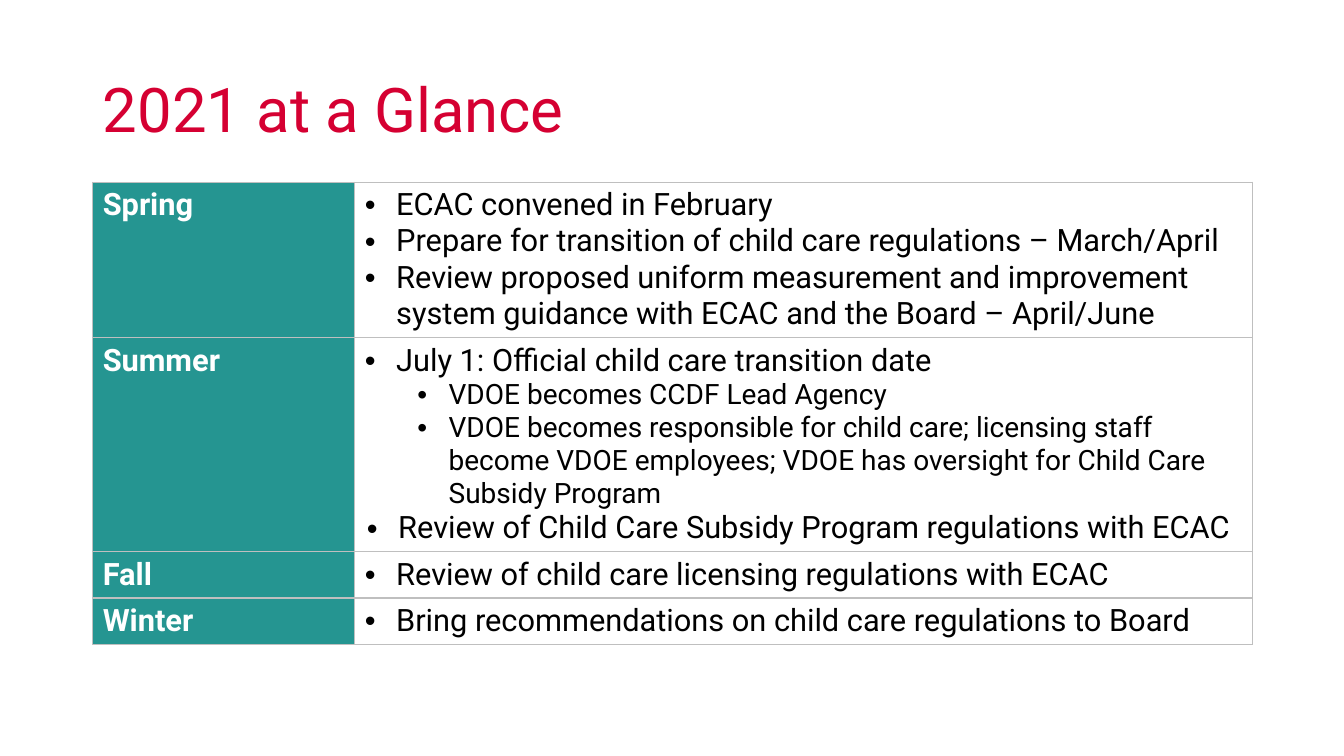
import lxml.etree
import pptx
import pptx.dml.color
import pptx.enum.text
import pptx.oxml.ns
import pptx.util

COLORS = {"title": "D50032", "season": "259591", "paper": "FFFFFF",
          "text": "000000", "border": "BFBFBF"}
FONT = "Roboto"
HANGING = 0.31

# Each event: text, outline level, left indent in inches
SEASONS = [
    ("Spring", 1.54, [
        ("ECAC convened in February", 0, 0.31),
        ("Prepare for transition of child care regulations – March/April", 0, 0.31),
        ("Review proposed uniform measurement and improvement system guidance "
         "with ECAC and the Board – April/June", 0, 0.31)]),
    ("Summer", 2.12, [
        ("July 1: Official child care transition date", 0, 0.31),
        ("VDOE becomes CCDF Lead Agency", 1, 0.83),
        ("VDOE becomes responsible for child care; licensing staff become VDOE "
         "employees; VDOE has oversight for Child Care Subsidy Program", 1, 0.83),
        ("Review of Child Care Subsidy Program regulations with ECAC", 0, 0.33)]),
    ("Fall", 0.46, [("Review of child care licensing regulations with ECAC", 0, 0.31)]),
    ("Winter", 0.46, [("Bring recommendations on child care regulations to Board", 0, 0.31)]),
]


def rgb(name):
    return pptx.dml.color.RGBColor.from_string(COLORS[name])


def add_element(parent, tag, **attributes):
    return lxml.etree.SubElement(parent, pptx.oxml.ns.qn(tag), attributes)


class SlideBuilder:
    """Holds the presentation, its slide and the shared text column."""

    def __init__(self):
        self.presentation = pptx.Presentation()
        self.presentation.slide_width = pptx.util.Inches(13.33)
        self.presentation.slide_height = pptx.util.Inches(7.5)
        self.slide = self.presentation.slides.add_slide(self.presentation.slide_layouts[5])
        self.left = self.across(0.069)
        self.width = self.across(0.863)

    def across(self, share):
        return int(self.presentation.slide_width * share)

    def down(self, share):
        return int(self.presentation.slide_height * share)

    def format_runs(self, paragraph, size, color, bold=False):
        for run in paragraph.runs:
            run.font.name = FONT
            run.font.size = pptx.util.Pt(size)
            run.font.bold = bold
            run.font.color.rgb = rgb(color)

    def title(self, text):
        shape = self.slide.shapes.title
        shape.left, shape.width = self.left, self.width
        shape.top, shape.height = self.down(0.053), self.down(0.193)
        frame = shape.text_frame
        frame.text = text
        frame.auto_size = pptx.enum.text.MSO_AUTO_SIZE.NONE
        frame.vertical_anchor = pptx.enum.text.MSO_ANCHOR.MIDDLE
        paragraph = frame.paragraphs[0]
        paragraph.alignment = pptx.enum.text.PP_ALIGN.LEFT
        paragraph.line_spacing = 0.9
        self.format_runs(paragraph, 44, "title")

    def bullet(self, paragraph, text, level, indent):
        paragraph.text = text
        paragraph.level = level
        properties = paragraph._p.get_or_add_pPr()
        properties.set("marL", str(pptx.util.Inches(indent)))
        properties.set("indent", str(-pptx.util.Inches(HANGING)))
        add_element(properties, "a:buFont", typeface="Arial")
        add_element(properties, "a:buChar", char="•")
        self.format_runs(paragraph, 20 if level else 22, "text")

    def style_cell(self, cell, fill):
        """Draw the thin border on all four sides, then fill the cell."""
        properties = cell._tc.get_or_add_tcPr()
        for side in ("a:lnL", "a:lnR", "a:lnT", "a:lnB"):
            line = add_element(properties, side, w=str(pptx.util.Pt(1)))
            solid = add_element(line, "a:solidFill")
            add_element(solid, "a:srgbClr", val=COLORS["border"])
        cell.fill.solid()
        cell.fill.fore_color.rgb = rgb(fill)

    def season_table(self, seasons):
        height = pptx.util.Inches(sum(season[1] for season in seasons))
        table = self.slide.shapes.add_table(
            len(seasons), 2, self.left, self.down(0.241), self.width, height).table
        table.columns[0].width = pptx.util.Inches(2.6)
        table.columns[1].width = self.width - table.columns[0].width
        for index, (name, row_height, events) in enumerate(seasons):
            table.rows[index].height = pptx.util.Inches(row_height)
            season_cell, event_cell = table.cell(index, 0), table.cell(index, 1)
            season_cell.text_frame.text = name
            self.format_runs(season_cell.text_frame.paragraphs[0], 22, "paper", bold=True)
            frame = event_cell.text_frame
            for position, event in enumerate(events):
                paragraph = frame.add_paragraph() if position else frame.paragraphs[0]
                self.bullet(paragraph, *event)
            self.style_cell(season_cell, "season")
            self.style_cell(event_cell, "paper")


def main():
    builder = SlideBuilder()
    builder.title("2021 at a Glance")
    builder.season_table(SEASONS)
    builder.presentation.save("out.pptx")


if __name__ == "__main__":
    main()
